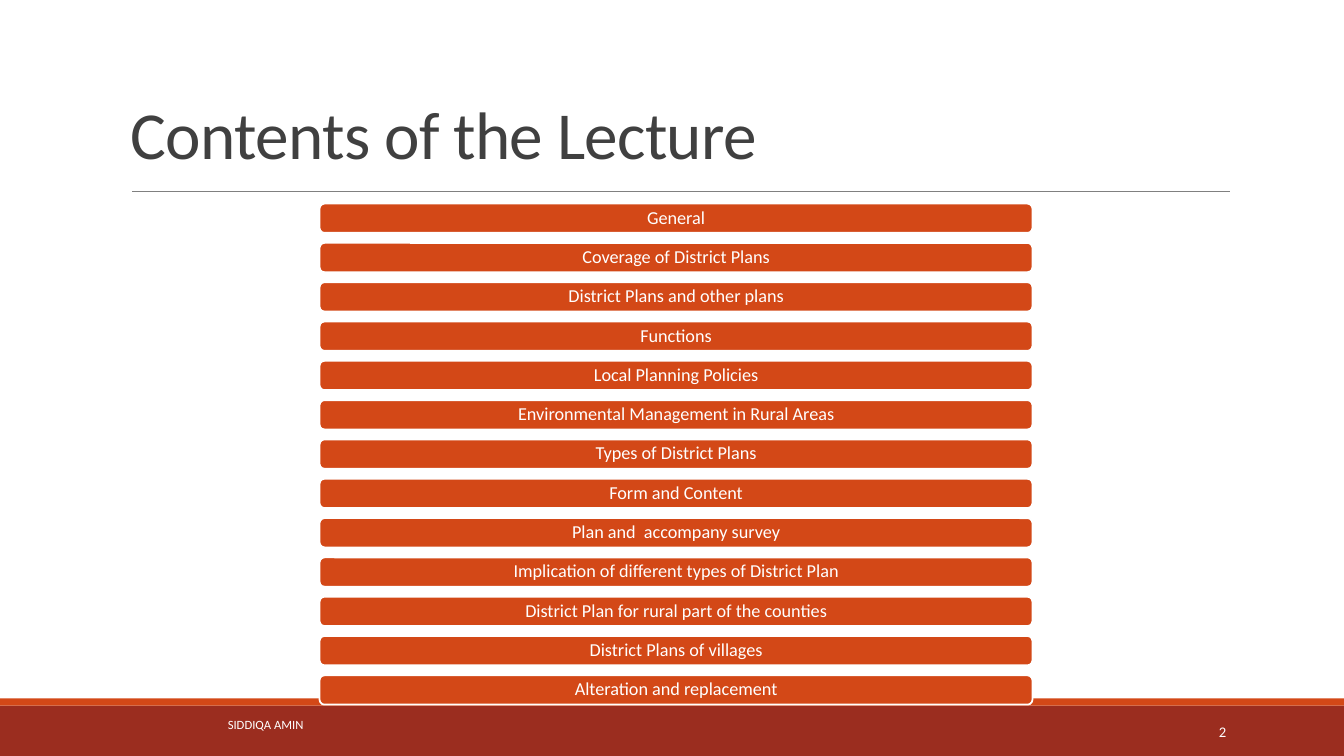
"""Build the lecture contents slide with its stack of topic bars."""
from lxml.etree import SubElement
from pptx import Presentation
from pptx.dml.color import RGBColor
from pptx.enum.shapes import MSO_CONNECTOR, MSO_SHAPE
from pptx.enum.text import MSO_ANCHOR, PP_ALIGN
from pptx.oxml.ns import qn
from pptx.util import Pt

TITLE = "Contents of the Lecture"
TOPICS = [
    "General",
    "Coverage of District Plans",
    "District Plans and other plans",
    "Functions",
    "Local Planning Policies",
    "Environmental Management in Rural Areas",
    "Types of District Plans",
    "Form and Content",
    "Plan and  accompany survey",
    "Implication of different types of District Plan",
    "District Plan for rural part of the counties",
    "District Plans of villages",
    "Alteration and replacement",
]
AUTHOR = "SIDDIQA AMIN"
PAGE = "2"

PX = 9144
FONT = "Calibri"
ORANGE = RGBColor(0xD3, 0x48, 0x17)
RED = RGBColor(0x9B, 0x2D, 0x1F)
GREY = RGBColor(0x80, 0x80, 0x80)
DARK = RGBColor(0x40, 0x40, 0x40)
WHITE = RGBColor(0xFF, 0xFF, 0xFF)

BAR_X, BAR_Y, BAR_W, BAR_H, BAR_PITCH = 317, 202, 707, 29, 39


def px(*lengths):
    return [n * PX for n in lengths]


def add_block(slide, kind, box, fill):
    sp = slide.shapes.add_shape(kind, *px(*box))
    sp.shadow.inherit = False
    sp.fill.solid()
    sp.fill.fore_color.rgb = fill
    sp.line.fill.background()
    return sp


def set_text(sp, text, size, color, align, anchor=MSO_ANCHOR.MIDDLE):
    tf = sp.text_frame
    tf.word_wrap = True
    tf.vertical_anchor = anchor
    p = tf.paragraphs[0]
    p.text = text
    p.alignment = align
    p.font.name = FONT
    p.font.size = Pt(size)
    p.font.color.rgb = color
    return p


def add_label(slide, box, *style):
    return set_text(slide.shapes.add_textbox(*px(*box)), *style)


def add_topic(slide, row, topic):
    box = (BAR_X, BAR_Y + row * BAR_PITCH, BAR_W, BAR_H)
    sp = add_block(slide, MSO_SHAPE.ROUNDED_RECTANGLE, box, ORANGE)
    sp.line.color.rgb = WHITE
    sp.line.width = Pt(1.25)
    tf = sp.text_frame
    tf.margin_left, tf.margin_right, tf.margin_top, tf.margin_bottom = px(5, 5, 3, 3)
    p = set_text(sp, topic, 13, WHITE, PP_ALIGN.CENTER)
    p.line_spacing = 0.9


def main():
    prs = Presentation()
    prs.slide_width, prs.slide_height = px(1333, 750)
    slide = prs.slides.add_slide(prs.slide_layouts[6])

    add_block(slide, MSO_SHAPE.RECTANGLE, (0, 700, 1333, 50), RED)
    add_block(slide, MSO_SHAPE.RECTANGLE, (0, 693, 1333, 7), ORANGE)
    rule = slide.shapes.add_connector(MSO_CONNECTOR.STRAIGHT, *px(131, 190, 1220, 190))
    rule.line.color.rgb = GREY
    rule.line.width = Pt(0.5)
    SubElement(rule._element.spPr, qn("a:effectLst"))

    p = add_label(slide, (120, 18, 1100, 159), TITLE, 48, DARK, PP_ALIGN.LEFT, MSO_ANCHOR.BOTTOM)
    p.line_spacing = 0.85
    p.runs[0]._r.get_or_add_rPr().set("spc", "-50")

    for row, topic in enumerate(TOPICS):
        add_topic(slide, row, topic)

    add_label(slide, (0, 699, 527, 40), AUTHOR, 9, WHITE, PP_ALIGN.CENTER)
    add_label(slide, (1083, 706, 143, 40), PAGE, 10.5, WHITE, PP_ALIGN.RIGHT)
    prs.save("out.pptx")


if __name__ == "__main__":
    main()
